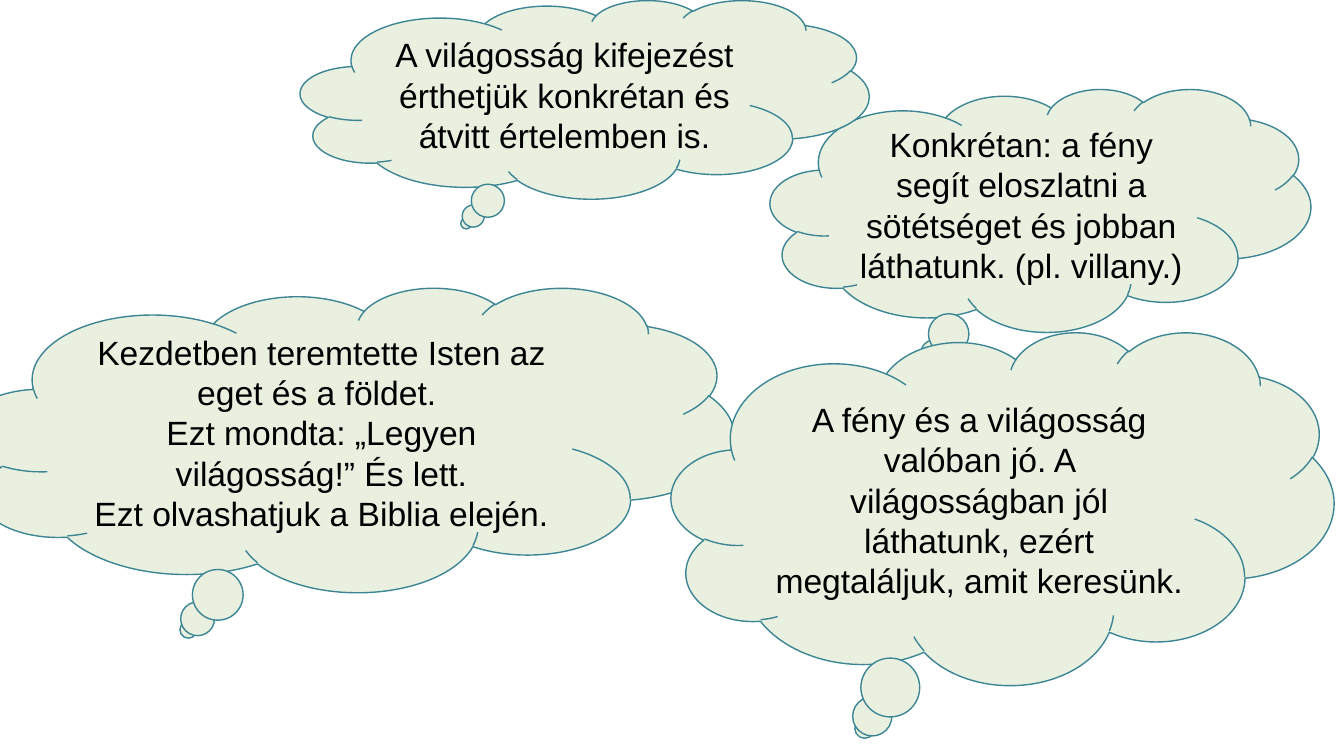
from pptx import Presentation
from pptx.dml.color import RGBColor
from pptx.enum import shapes, text
from pptx.util import Inches, Pt

# Content, from back to front: left, top, width, height, paragraphs
CLOUDS = [
    (7.64, 0.88, 5.36, 2.41,
     ["Konkrétan: a fény segít eloszlatni a sötétséget és jobban láthatunk. (pl. villany.)"]),
    (-0.36, 2.85, 7.64, 3.02,
     ["Kezdetben teremtette Isten az eget és a földet. ",
      "Ezt mondta: „Legyen világosság!” És lett.",
      "Ezt olvashatjuk a Biblia elején."]),
    (2.98, 0, 5.64, 1.97,
     ["A világosság kifejezést érthetjük konkrétan és átvitt értelemben is."]),
    (6.66, 3.29, 6.57, 3.5,
     ["A fény és a világosság valóban jó. A világosságban jól láthatunk, "
      "ezért megtaláljuk, amit keresünk."]),
]
FILL, LINE, INK = "EAF0E0", "3B8594", "000000"


def color(fmt, value):
    fmt.rgb = RGBColor.from_string(value)


def write(tf, paragraphs, size=24, font="Arial", ink=INK):
    tf.word_wrap = True
    tf.vertical_anchor = text.MSO_ANCHOR.MIDDLE
    for i, line in enumerate(paragraphs):
        p = tf.paragraphs[0] if i == 0 else tf.add_paragraph()
        p.alignment = text.PP_ALIGN.CENTER
        r = p.add_run()
        r.text = line
        r.font.size, r.font.name = Pt(size), font
        color(r.font.color, ink)


prs = Presentation()
prs.slide_width, prs.slide_height = Inches(13.33), Inches(7.5)
s = prs.slides.add_slide(prs.slide_layouts[6])

# Thought clouds
for *box, paragraphs in CLOUDS:
    sp = s.shapes.add_shape(shapes.MSO_SHAPE.CLOUD_CALLOUT, *map(Inches, box))
    sp.shadow.inherit = False
    sp.fill.solid()
    color(sp.fill.fore_color, FILL)
    color(sp.line.color, LINE)
    sp.line.width = Pt(1)
    write(sp.text_frame, paragraphs)

prs.save("out.pptx")
